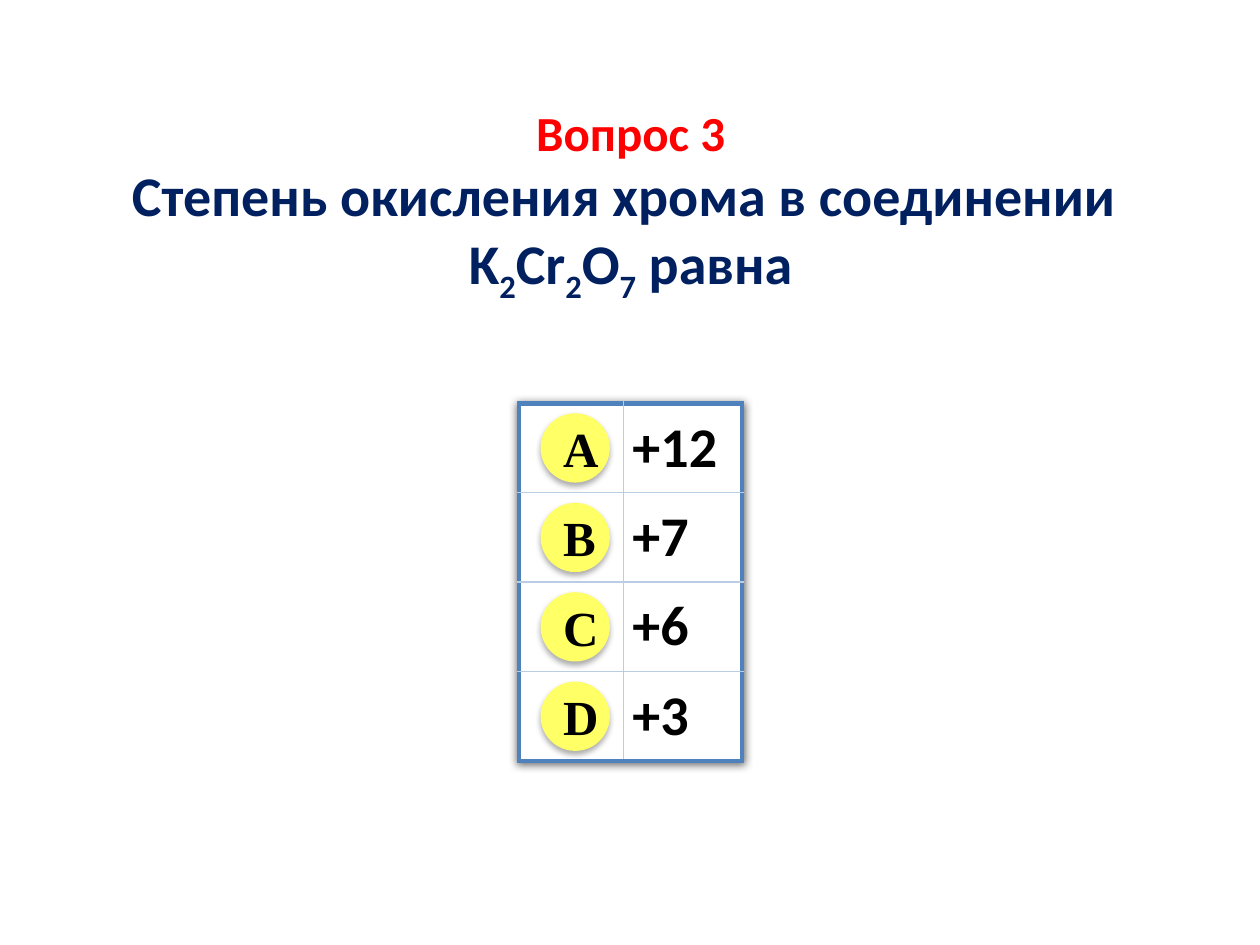
"""Build a quiz slide about the oxidation state of chromium."""
from dataclasses import dataclass

import lxml.etree
import pptx
import pptx.dml.color
import pptx.enum.shapes
import pptx.enum.text
import pptx.oxml.ns
import pptx.slide
import pptx.table
import pptx.util

Inches = pptx.util.Inches
Pt = pptx.util.Pt
RGB = pptx.dml.color.RGBColor.from_string
qn = pptx.oxml.ns.qn
MSO_ANCHOR = pptx.enum.text.MSO_ANCHOR
PP_ALIGN = pptx.enum.text.PP_ALIGN


@dataclass(frozen=True)
class Theme:
    white: str = "FFFFFF"
    black: str = "000000"
    heading: str = "FF0000"
    question: str = "002060"
    badge: str = "FFFF66"
    frame: str = "4F81BD"
    grid: str = "B9CDE5"
    body_font: str = "Calibri"
    badge_font: str = "Times New Roman"
    small: int = 28
    large: int = 32
    frame_width: int = 3
    grid_width: int = 1


@dataclass(frozen=True)
class Answer:
    letter: str
    value: str


@dataclass(frozen=True)
class Shadow:
    opacity: int
    blur: float
    distance: float


THEME = Theme()
ANSWERS = [Answer("A", "+12"), Answer("B", "+7"), Answer("C", "+6"), Answer("D", "+3")]
FORMULA = [("K", False), ("2", True), ("Cr", False), ("2", True),
           ("O", False), ("7", True), (" равна", False)]
COLS = (0.83, 0.94)
TABLE_LEFT, TABLE_TOP, ROW = 4.12, 3.2, 0.71
BADGE_LEFT, BADGE_TOP, BADGE = 4.29, 3.28, 0.55
BADGE_SHADOW = Shadow(32, 3.5, 2.2)
TABLE_SHADOW = Shadow(60, 5, 1)


def style(p, size: int, color: str, font: str) -> None:
    """Format a whole paragraph in bold."""
    p.font.size = Pt(size)
    p.font.bold = True
    p.font.name = font
    p.font.color.rgb = RGB(color)


def shadow_xml(shadow: Shadow) -> lxml.etree._Element:
    """Return an effect list holding a downward black shadow."""
    effects = pptx.oxml.parse_xml(f"<a:effectLst {pptx.oxml.ns.nsdecls('a')}/>")
    outer = lxml.etree.SubElement(
        effects, qn("a:outerShdw"), blurRad=str(int(Pt(shadow.blur))),
        dist=str(int(Pt(shadow.distance))), dir="5400000", rotWithShape="0")
    color = lxml.etree.SubElement(outer, qn("a:srgbClr"), val=THEME.black)
    lxml.etree.SubElement(color, qn("a:alpha"), val=str(shadow.opacity * 1000))
    return effects


def add_title(s: pptx.slide.Slide) -> None:
    """Write the question in the title placeholder."""
    sp = s.shapes.title
    sp.left, sp.top, sp.width, sp.height = map(Inches, (0.24, 0.76, 9.53, 1.65))
    sp.fill.solid()
    sp.fill.fore_color.rgb = RGB(THEME.white)
    tf = sp.text_frame
    tf.word_wrap = True
    tf.vertical_anchor = MSO_ANCHOR.TOP
    tf.auto_size = pptx.enum.text.MSO_AUTO_SIZE.SHAPE_TO_FIT_TEXT
    lines = [([("Вопрос 3", False)], THEME.small, THEME.heading),
             ([("Степень окисления хрома в соединении ", False)],
              THEME.large, THEME.question),
             (FORMULA, THEME.large, THEME.question)]
    for i, (parts, size, color) in enumerate(lines):
        p = tf.add_paragraph() if i else tf.paragraphs[0]
        p.alignment = PP_ALIGN.CENTER
        style(p, size, color, THEME.body_font)
        for text, subscript in parts:
            r = p.add_run()
            r.text = text
            if subscript:
                r._r.get_or_add_rPr().set("baseline", "-25000")


def format_cell(cell: pptx.table._Cell, outer: dict[str, bool]) -> None:
    """Give a cell its borders, fill and margins."""
    tc_pr = cell._tc.get_or_add_tcPr()
    for side, is_outer in outer.items():
        width = THEME.frame_width if is_outer else THEME.grid_width
        ln = lxml.etree.SubElement(tc_pr, qn(f"a:ln{side}"), w=str(int(Pt(width))))
        fill = lxml.etree.SubElement(ln, qn("a:solidFill"))
        lxml.etree.SubElement(fill, qn("a:srgbClr"),
                              val=THEME.frame if is_outer else THEME.grid)
    cell.fill.solid()
    cell.fill.fore_color.rgb = RGB(THEME.white)
    cell.vertical_anchor = MSO_ANCHOR.MIDDLE
    cell.margin_left = cell.margin_right = Inches(0.07)
    cell.margin_top = cell.margin_bottom = 0


def add_answers(s: pptx.slide.Slide) -> None:
    """Draw the framed table of answers."""
    n = len(ANSWERS)
    table = s.shapes.add_table(n, len(COLS), Inches(TABLE_LEFT), Inches(TABLE_TOP),
                               Inches(sum(COLS)), Inches(ROW * n)).table
    table.first_row = table.horz_banding = False
    table._tbl.tblPr.insert(0, shadow_xml(TABLE_SHADOW))
    for column, width in zip(table.columns, COLS):
        column.width = Inches(width)
    for i, answer in enumerate(ANSWERS):
        table.rows[i].height = Inches(ROW)
        for j in range(len(COLS)):
            format_cell(table.cell(i, j), {"L": j == 0, "R": j == len(COLS) - 1,
                                           "T": i == 0, "B": i == n - 1})
        p = table.cell(i, 1).text_frame.paragraphs[0]
        p.add_run().text = answer.value
        style(p, THEME.large, THEME.black, THEME.body_font)


def add_badge(s: pptx.slide.Slide, letter: str, top: float) -> None:
    """Draw a lettered circle."""
    sp = s.shapes.add_shape(pptx.enum.shapes.MSO_SHAPE.OVAL, Inches(BADGE_LEFT),
                            Inches(top), Inches(BADGE), Inches(BADGE))
    sp.fill.solid()
    sp.fill.fore_color.rgb = RGB(THEME.badge)
    sp.line.fill.background()
    sp._element.spPr.append(shadow_xml(BADGE_SHADOW))
    tf = sp.text_frame
    tf.word_wrap = True
    tf.vertical_anchor = MSO_ANCHOR.MIDDLE
    p = tf.paragraphs[0]
    p.add_run().text = letter
    p.alignment = PP_ALIGN.CENTER
    style(p, THEME.small, THEME.black, THEME.badge_font)


def main() -> None:
    """Build and save the slide."""
    prs = pptx.Presentation()
    prs.slide_width, prs.slide_height = Inches(10), Inches(7.5)
    s = prs.slides.add_slide(prs.slide_layouts[5])
    add_title(s)
    add_answers(s)
    for i, answer in enumerate(ANSWERS):
        add_badge(s, answer.letter, BADGE_TOP + i * ROW)
    prs.save("out.pptx")


if __name__ == "__main__":
    main()
